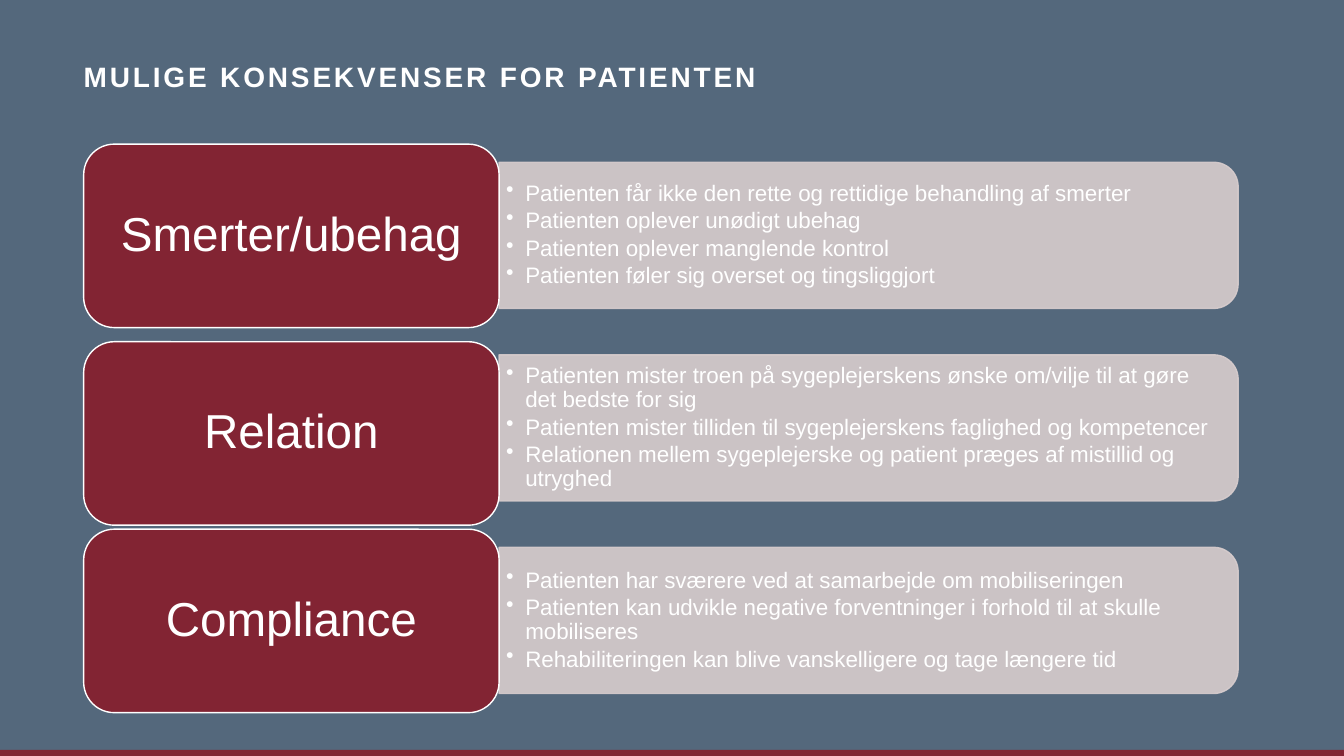
from lxml import etree
from pptx import Presentation
from pptx.dml.color import RGBColor
from pptx.enum import shapes, text
from pptx.oxml import ns
from pptx.util import Inches, Pt

SLATE = RGBColor(0x54, 0x68, 0x7C)
WINE = RGBColor(0x82, 0x24, 0x33)
ROSE = RGBColor(0xD8, 0xCD, 0xCE)
WHITE = RGBColor(0xFF, 0xFF, 0xFF)

WIDE, HIGH = 13.33, 7.5
LEFT = 0.83
CARD_W, CARD_H = 4.12, 1.82
PANEL_W, PANEL_H = 7.33, 1.45
PANEL_TOP, PITCH = 1.61, 1.91

TOPICS = [
    (1.43, "Smerter/ubehag", [
        "Patienten får ikke den rette og rettidige behandling af smerter",
        "Patienten oplever unødigt ubehag",
        "Patienten oplever manglende kontrol",
        "Patienten føler sig overset og tingsliggjort",
    ]),
    (3.39, "Relation", [
        "Patienten mister troen på sygeplejerskens ønske om/vilje til at gøre det bedste for sig",
        "Patienten mister tilliden til sygeplejerskens faglighed og kompetencer",
        "Relationen mellem sygeplejerske og patient præges af mistillid og utryghed",
    ]),
    (5.25, "Compliance", [
        "Patienten har sværere ved at samarbejde om mobiliseringen",
        "Patienten kan udvikle negative forventninger i forhold til at skulle mobiliseres",
        "Rehabiliteringen kan blive vanskelligere og tage længere tid",
    ]),
]


def add_form(slide, kind, box, fill, line=None):
    form = slide.shapes.add_shape(kind, *map(Inches, box))
    form.shadow.inherit = False
    form.fill.solid()
    form.fill.fore_color.rgb = fill
    if line is None:
        form.line.fill.background()
    else:
        form.line.color.rgb = line
        form.line.width = Pt(1)
    return form


def set_frame(frame, anchor, side, end):
    frame.word_wrap = True
    frame.vertical_anchor = anchor
    frame.margin_left = frame.margin_right = Inches(side)
    frame.margin_top = frame.margin_bottom = Inches(end)


def set_font(para, size, bold=False):
    para.line_spacing = 0.9
    para.font.name = "Arial"
    para.font.size = Pt(size)
    para.font.bold = bold
    para.font.color.rgb = WHITE


def add_title(slide, box):
    frame = slide.shapes.add_textbox(*map(Inches, box)).text_frame
    set_frame(frame, text.MSO_ANCHOR.BOTTOM, 0, 0)
    para = frame.paragraphs[0]
    run = para.add_run()
    run.text = "MULIGE KONSEKVENSER FOR PATIENTEN"
    run._r.get_or_add_rPr().set("spc", "200")  # letter spacing
    set_font(para, 20, True)


def add_panel(slide, box):
    left, top, width, height = box
    # The shape stands upright and is turned so its round corners face right
    upright = (left + (width - height) / 2, top + (height - width) / 2,
               height, width)
    panel = add_form(slide, shapes.MSO_SHAPE.ROUND_2_SAME_RECTANGLE,
                     upright, ROSE, ROSE)
    panel.rotation = 90
    for color in panel._element.spPr.iter(ns.qn("a:srgbClr")):
        etree.SubElement(color, ns.qn("a:alpha"), val="90000")


def add_points(slide, box, points):
    frame = slide.shapes.add_textbox(*map(Inches, box)).text_frame
    set_frame(frame, text.MSO_ANCHOR.MIDDLE, 0.07, 0.03)
    for i, point in enumerate(points):
        para = frame.add_paragraph() if i else frame.paragraphs[0]
        para.text = point
        para.level = 1
        props = para._p.get_or_add_pPr()
        props.set("marL", str(Inches(0.19)))
        props.set("indent", str(-Inches(0.19)))
        etree.SubElement(props, ns.qn("a:buChar"), char="•")
        para.space_after = Pt(2.4)
        set_font(para, 16)


def add_card(slide, box, label):
    card = add_form(slide, shapes.MSO_SHAPE.ROUNDED_RECTANGLE,
                    box, WINE, WHITE)
    set_frame(card.text_frame, text.MSO_ANCHOR.MIDDLE, 0.22, 0.16)
    para = card.text_frame.paragraphs[0]
    para.text = label
    para.alignment = text.PP_ALIGN.CENTER
    set_font(para, 34)


def add_topic(slide, card, panel, label, points):
    left, top, width, height = panel
    add_panel(slide, panel)
    add_points(slide, (left, top + 0.07, width - 0.07, height - 0.14), points)
    add_card(slide, card, label)


def main():
    deck = Presentation()
    deck.slide_width, deck.slide_height = Inches(WIDE), Inches(HIGH)
    slide = deck.slides.add_slide(deck.slide_layouts[6])

    # Backdrop and bottom strip
    slide.background.fill.solid()
    slide.background.fill.fore_color.rgb = SLATE
    add_form(slide, shapes.MSO_SHAPE.RECTANGLE,
             (0, HIGH - 0.06, WIDE, 0.06), WINE)

    add_title(slide, (LEFT, 0.18, 11.65, 0.75))

    # One row per topic
    for i, (top, label, points) in enumerate(TOPICS):
        card = (LEFT, top, CARD_W, CARD_H)
        panel = (LEFT + CARD_W, PANEL_TOP + i * PITCH, PANEL_W, PANEL_H)
        add_topic(slide, card, panel, label, points)

    deck.save("out.pptx")


if __name__ == "__main__":
    main()
